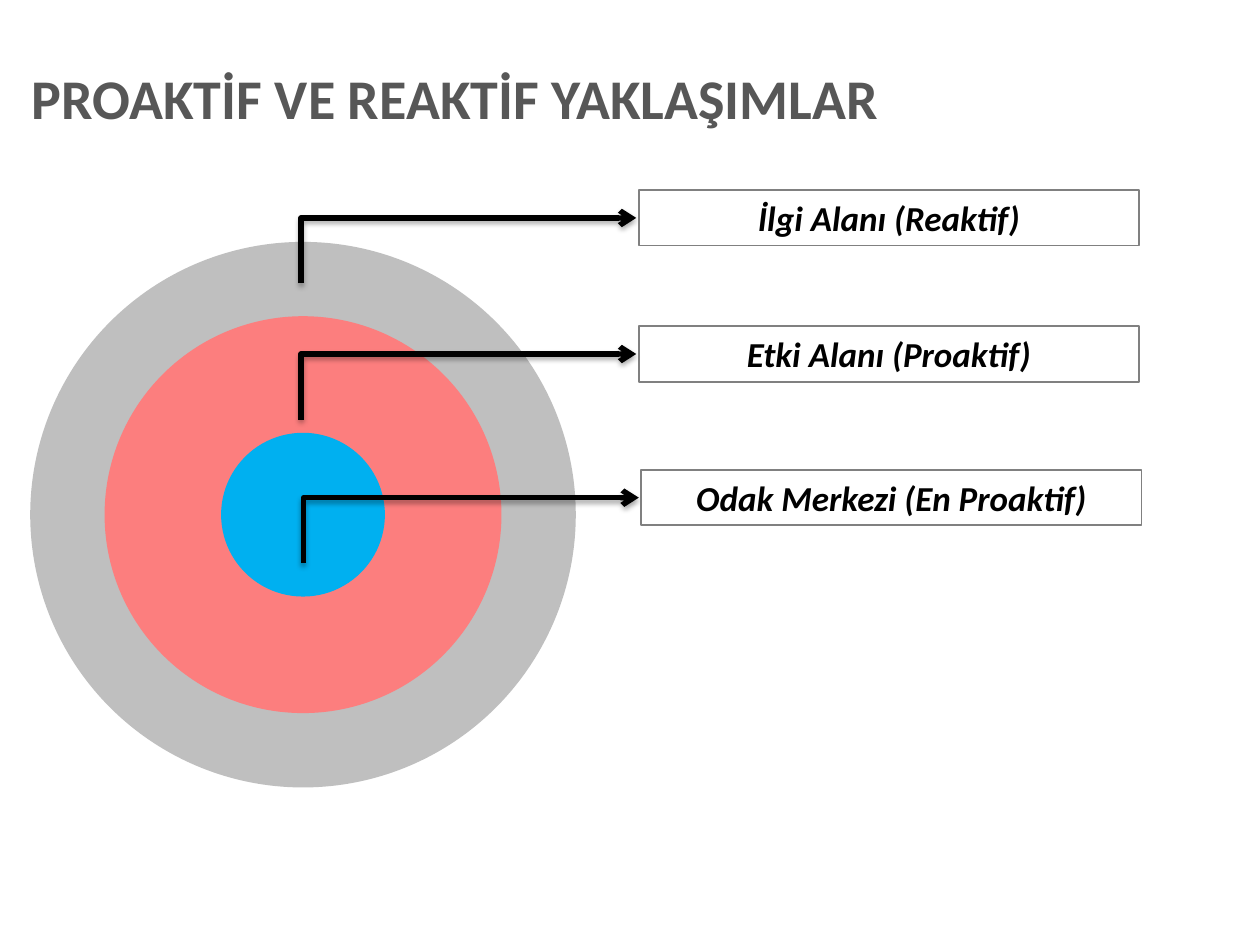
from dataclasses import dataclass

from lxml import etree
from pptx import Presentation
from pptx import util as u
from pptx.dml.color import RGBColor
from pptx.enum import shapes, text
from pptx.oxml import ns


@dataclass(frozen=True)
class Theme:
    font: str = "Calibri"
    heading: str = "575757"
    ink: str = "000000"
    border: str = "808080"
    concern: str = "BFBFBF"
    influence: str = "FC7E7E"
    focus: str = "00B0F0"
    title_size: int = 32
    label_size: int = 20


THEME = Theme()
RINGS = [
    (4.33, THEME.concern, "İlgi Alanı (Reaktif)", 5.07, 1.51),
    (3.15, THEME.influence, "Etki Alanı (Proaktif)", 5.07, 2.59),
    (1.3, THEME.focus, "Odak Merkezi (En Proaktif)", 5.09, 3.73),
]


def rgb(value):
    return RGBColor.from_string(value)


def inches(*lengths):
    return [u.Inches(length) for length in lengths]


def style(font, size, color, italic=None):
    font.name = THEME.font
    font.size = u.Pt(size)
    font.bold = True
    font.italic = italic
    font.color.rgb = rgb(color)


def add_title(slide, box):
    title = slide.shapes.title
    title.left, title.top, title.width, title.height = inches(*box)
    frame = title.text_frame
    frame.text = "PROAKTİF VE REAKTİF YAKLAŞIMLAR"
    frame.margin_left = frame.margin_right = 0
    frame.vertical_anchor = text.MSO_ANCHOR.MIDDLE
    heading = frame.paragraphs[0]
    heading.alignment = text.PP_ALIGN.LEFT
    heading.line_spacing = 0.9
    style(heading.runs[0].font, THEME.title_size, THEME.heading)


def add_ring(slide, center, diameter, color):
    left, top = (c - diameter / 2 for c in center)
    ring = slide.shapes.add_shape(
        shapes.MSO_SHAPE.OVAL, *inches(left, top, diameter, diameter))
    ring.shadow.inherit = False
    ring.fill.solid()
    ring.fill.fore_color.rgb = rgb(color)
    ring.line.fill.background()


def add_pointer(slide, box):
    left, top, width, height = box
    mid_x, mid_y = left + width / 2, top + height / 2
    pointer = slide.shapes.add_connector(
        shapes.MSO_CONNECTOR.ELBOW,
        *inches(mid_x + height / 2, mid_y + width / 2,
                mid_x - height / 2, mid_y - width / 2))
    pointer.line.color.rgb = rgb(THEME.ink)
    pointer.line.width = u.Pt(3)
    properties = pointer._element.spPr
    properties.find(ns.qn("a:xfrm")).set("rot", "5400000")
    properties.find(ns.qn("a:prstGeom")).set("prst", "bentConnector2")
    etree.SubElement(properties.find(ns.qn("a:ln")), ns.qn("a:tailEnd"), type="arrow")
    effects = etree.SubElement(properties, ns.qn("a:effectLst"))
    shadow = etree.SubElement(
        effects, ns.qn("a:outerShdw"), blurRad=str(u.Pt(3.1)),
        dist=str(u.Pt(1.8)), dir="5400000", rotWithShape="0")
    shade = etree.SubElement(shadow, ns.qn("a:srgbClr"), val=THEME.ink)
    etree.SubElement(shade, ns.qn("a:alpha"), val="35000")


def add_label(slide, box, wording):
    label = slide.shapes.add_shape(shapes.MSO_SHAPE.RECTANGLE, *inches(*box))
    label.shadow.inherit = False
    label.fill.background()
    label.line.color.rgb = rgb(THEME.border)
    label.line.width = u.Pt(1)
    frame = label.text_frame
    frame.text = wording
    frame.word_wrap = True
    frame.auto_size = text.MSO_AUTO_SIZE.SHAPE_TO_FIT_TEXT
    frame.vertical_anchor = text.MSO_ANCHOR.TOP
    caption = frame.paragraphs[0]
    caption.alignment = text.PP_ALIGN.CENTER
    style(caption.runs[0].font, THEME.label_size, THEME.ink, italic=True)


def add_target(slide, box):
    left, top, width, height = box
    center = left + width / 2, top + height / 2
    for diameter, color, wording, label_left, label_top in RINGS:
        add_ring(slide, center, diameter, color)
        add_pointer(slide, (label_left - 2.68, label_top + 0.22, 2.66, 0.52))
        add_label(slide, (label_left, label_top, 3.97, 0.44), wording)


def main():
    deck = Presentation()
    deck.slide_width, deck.slide_height = inches(10, 7.5)
    slide = deck.slides.add_slide(deck.slide_layouts.get_by_name("Title Only"))
    add_title(slide, (0.25, 0.45, 9.64, 0.71))
    add_target(slide, (0.24, 1.92, 4.33, 4.33))
    deck.save("out.pptx")


if __name__ == "__main__":
    main()
